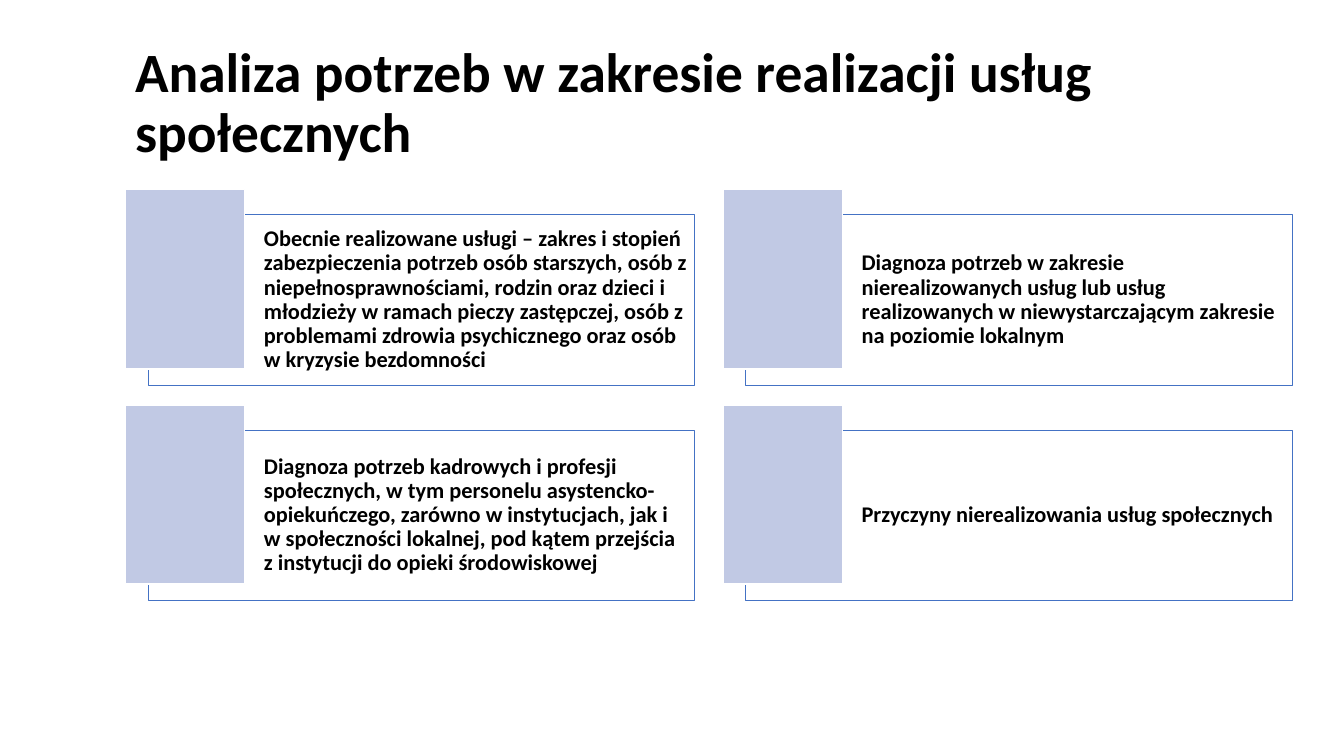
from lxml import etree
from pptx import Presentation
from pptx.dml.color import RGBColor
from pptx.enum import shapes, text
from pptx.oxml.ns import qn
from pptx.util import Pt

BLACK = RGBColor(0x00, 0x00, 0x00)
WHITE = RGBColor(0xFF, 0xFF, 0xFF)
BLUE = RGBColor(0x44, 0x72, 0xC4)
LAVENDER = RGBColor(0xC1, 0xC9, 0xE4)
FONT = "Calibri"

TITLE = "Analiza potrzeb w zakresie realizacji usług społecznych"
TOPICS = [
    "Obecnie realizowane usługi – zakres i stopień zabezpieczenia potrzeb osób "
    "starszych, osób z niepełnosprawnościami, rodzin oraz dzieci i młodzieży w "
    "ramach pieczy zastępczej, osób z problemami zdrowia psychicznego oraz osób "
    "w kryzysie bezdomności",
    "Diagnoza potrzeb w zakresie nierealizowanych usług lub usług realizowanych "
    "w niewystarczającym zakresie na poziomie lokalnym",
    "Diagnoza potrzeb kadrowych i profesji społecznych, w tym personelu "
    "asystencko-opiekuńczego, zarówno w instytucjach, jak i w społeczności "
    "lokalnej, pod kątem przejścia z instytucji do opieki środowiskowej",
    "Przyczyny nierealizowania usług społecznych",
]
COLUMNS = 2
CARD_W, CARD_H = 406.8, 139.6
GAP_X, GAP_Y = 20.1, 14.1


def write(sp, content, size):
    """Fill a shape with one bold, left-aligned, vertically centred paragraph."""
    tf = sp.text_frame
    tf.word_wrap = True
    tf.vertical_anchor = text.MSO_ANCHOR.MIDDLE
    p = tf.paragraphs[0]
    p.alignment = text.PP_ALIGN.LEFT
    p.line_spacing = 0.9
    r = p.add_run()
    r.text = content
    r.font.name, r.font.size, r.font.bold = FONT, Pt(size), True
    r.font.color.rgb = BLACK
    return tf


def add_rect(s, left, top, width, height, fill, line, weight):
    sp = s.shapes.add_shape(shapes.MSO_SHAPE.RECTANGLE,
                            Pt(left), Pt(top), Pt(width), Pt(height))
    sp.shadow.inherit = False
    sp.fill.solid()
    sp.fill.fore_color.rgb = fill
    sp.line.color.rgb = line
    sp.line.width = Pt(weight)
    return sp


def set_opacity(sp, percent):
    color = sp.fill._xPr.find(qn("a:solidFill"))[0]
    etree.SubElement(color, qn("a:alpha")).set("val", str(percent * 1000))


def add_title(s, left, top, width, height):
    sp = s.shapes.add_textbox(Pt(left), Pt(top), Pt(width), Pt(height))
    write(sp, TITLE, 39.6)


def add_card(s, left, top, width, height, topic):
    """Outlined text frame with an accent block over its upper left corner."""
    dx, dy = 16.4, 17.9
    frame = add_rect(s, left + dx, top + dy, width - dx, height - dy, WHITE, BLUE, 0.5)
    set_opacity(frame, 40)
    tf = write(frame, topic, 16)
    tf.margin_left = Pt(82.8)
    tf.margin_right = tf.margin_top = tf.margin_bottom = Pt(5)
    add_rect(s, left, top, 85.4, 128, LAVENDER, WHITE, 1)


def add_card_grid(s, left, top):
    for i, topic in enumerate(TOPICS):
        row, col = divmod(i, COLUMNS)
        add_card(s, left + col * (CARD_W + GAP_X), top + row * (CARD_H + GAP_Y),
                 CARD_W, CARD_H, topic)


def main():
    prs = Presentation()
    prs.slide_width, prs.slide_height = Pt(960), Pt(540)
    s = prs.slides.add_slide(prs.slide_layouts[6])
    add_title(s, 89.4, 24.5, 815.8, 100.8)
    add_card_grid(s, 89.4, 135.5)
    prs.save("out.pptx")


if __name__ == "__main__":
    main()
